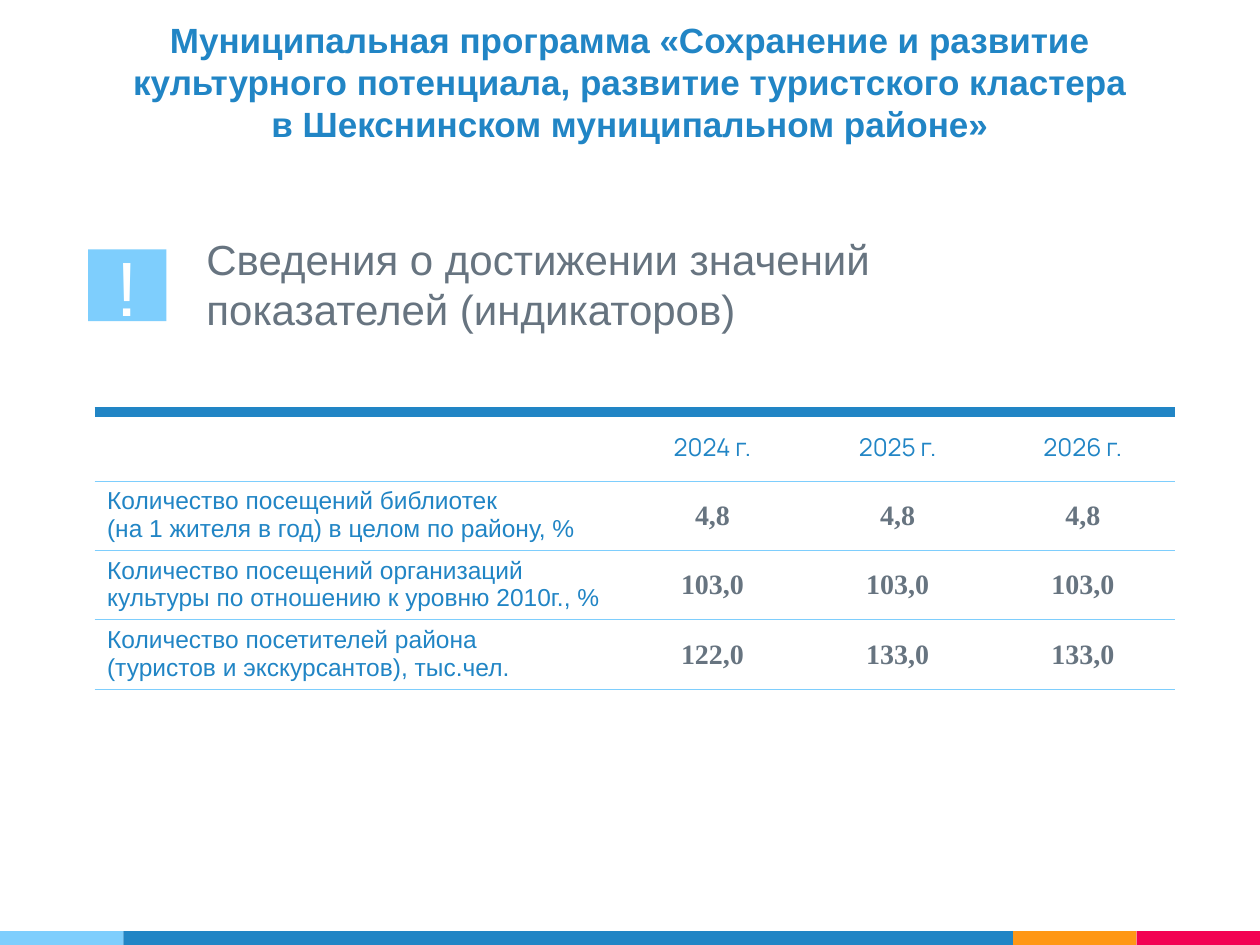
from lxml.etree import SubElement
from pptx import Presentation
from pptx.dml.color import RGBColor
from pptx.enum.shapes import MSO_SHAPE
from pptx.enum.text import MSO_ANCHOR, MSO_AUTO_SIZE, PP_ALIGN
from pptx.oxml.ns import qn
from pptx.util import Inches, Pt

BLUE = RGBColor(0x21, 0x85, 0xC5)
SKY = RGBColor(0x7E, 0xCE, 0xFD)
ORANGE = RGBColor(0xFF, 0x97, 0x15)
CRIMSON = RGBColor(0xF2, 0x02, 0x53)
GRAY = RGBColor(0x67, 0x74, 0x80)
WHITE = RGBColor(0xFF, 0xFF, 0xFF)

YEARS = ["", "2024 г.", "2025 г.", "2026 г."]
INDICATORS = [
    ["Количество посещений библиотек\n(на 1 жителя в год) в целом по району, %",
     "4,8", "4,8", "4,8"],
    ["Количество посещений организаций культуры по отношению к уровню 2010г., %",
     "103,0", "103,0", "103,0"],
    ["Количество посетителей района\n(туристов и экскурсантов), тыс.чел.",
     "122,0", "133,0", "133,0"],
]


def write_text(frame, text, size, color, font="Arial", bold=False,
               align=PP_ALIGN.LEFT):
    frame.text = text
    for para in frame.paragraphs:
        para.alignment = align
        for span in para.runs:
            span.font.name = font
            span.font.size = Pt(size)
            span.font.bold = bold
            span.font.color.rgb = color


def add_block(page, left, top, width, height, color):
    block = page.shapes.add_shape(MSO_SHAPE.RECTANGLE, Inches(left), Inches(top),
                                  Inches(width), Inches(height))
    block.shadow.inherit = False
    block.fill.solid()
    block.fill.fore_color.rgb = color
    block.line.fill.background()
    return block


def set_borders(cell, top, bottom):
    """Rule the cell above and below with (colour, points); leave the sides open."""
    properties = cell._tc.get_or_add_tcPr()
    for tag, rule in (("lnL", None), ("lnR", None), ("lnT", top), ("lnB", bottom)):
        line = SubElement(properties, qn(f"a:{tag}"))
        if rule is None:
            SubElement(line, qn("a:noFill"))
            continue
        color, points = rule
        line.set("w", str(int(Pt(points))))
        fill = SubElement(line, qn("a:solidFill"))
        SubElement(fill, qn("a:srgbClr"), val=str(color))


def add_title(page):
    title = page.shapes.title
    title.left, title.top = Inches(0), Inches(0.1)
    title.width, title.height = Inches(10), Inches(1.1)
    frame = title.text_frame
    write_text(frame, "Муниципальная программа «Сохранение и развитие\v"
               "культурного потенциала, развитие туристского кластера\v"
               "в Шекснинском муниципальном районе»",
               20, BLUE, bold=True, align=PP_ALIGN.CENTER)
    frame.auto_size = MSO_AUTO_SIZE.NONE
    frame.vertical_anchor = MSO_ANCHOR.TOP


def add_heading(page):
    box = page.shapes.add_textbox(Inches(1.54), Inches(1.8), Inches(6.04), Inches(0.91))
    box.text_frame.word_wrap = True
    write_text(box.text_frame, "Сведения о достижении значений показателей (индикаторов)",
               24, GRAY)

    badge = add_block(page, 0.7, 1.98, 0.62, 0.57, SKY)
    frame = badge.text_frame
    frame.margin_left = frame.margin_right = Inches(0.1)
    frame.margin_top = frame.margin_bottom = Inches(0.1)
    frame.vertical_anchor = MSO_ANCHOR.MIDDLE
    write_text(frame, "!", 44, WHITE, align=PP_ALIGN.CENTER)


def add_indicator_table(page):
    rows = [YEARS] + INDICATORS
    table = page.shapes.add_table(len(rows), len(YEARS), Inches(0.75), Inches(3.27),
                                  Inches(8.58), Inches(0.55 * len(rows))).table
    table.first_row = table.horz_banding = False
    for index, column in enumerate(table.columns):
        column.width = Inches(1.47 if index else 4.17)

    thin, thick = (SKY, 0.75), (BLUE, 6)
    for row_index, values in enumerate(rows):
        for column_index, value in enumerate(values):
            cell = table.cell(row_index, column_index)
            frame = cell.text_frame
            if column_index == 0:
                write_text(frame, value, 14, BLUE)
            else:
                cell.vertical_anchor = MSO_ANCHOR.MIDDLE
                if row_index == 0:
                    write_text(frame, value, 14, BLUE, "Manrope", align=PP_ALIGN.CENTER)
                else:
                    write_text(frame, value, 16, GRAY, "Times New Roman", True,
                               PP_ALIGN.CENTER)
            set_borders(cell, thin if row_index else thick, thin)
            cell.fill.background()


def add_footer_strip(page):
    left = 0
    for width, color in ((0.98, SKY), (7.06, BLUE), (0.98, ORANGE), (0.98, CRIMSON)):
        add_block(page, left, 7.39, width, 0.11, color)
        left += width


def main():
    deck = Presentation()
    deck.slide_width, deck.slide_height = Inches(10), Inches(7.5)
    page = deck.slides.add_slide(deck.slide_layouts[5])  # Title Only
    add_footer_strip(page)
    add_indicator_table(page)
    add_heading(page)
    add_title(page)
    deck.save("out.pptx")


if __name__ == "__main__":
    main()
